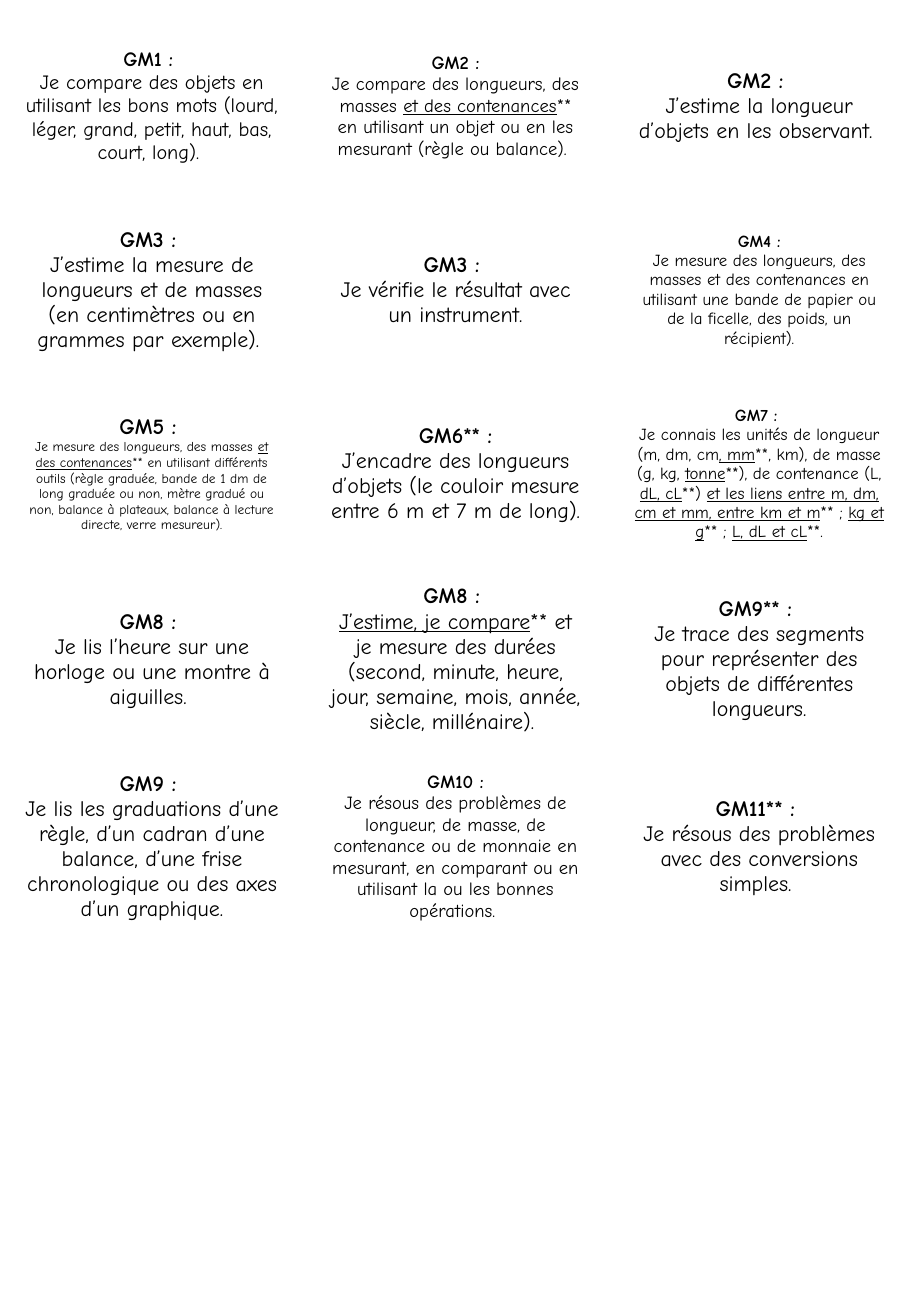
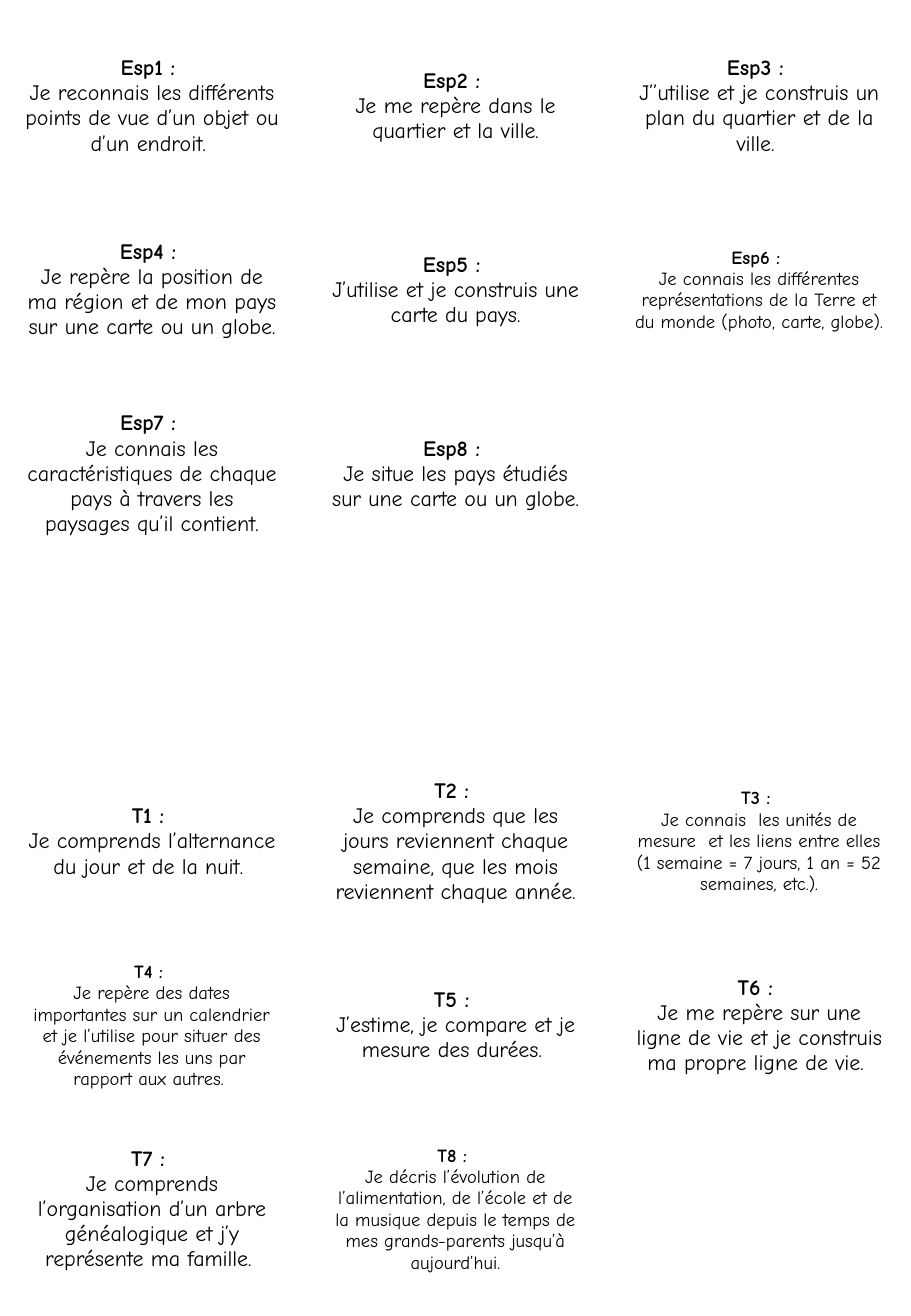
from pptx import Presentation
from pptx.dml.color import RGBColor
from pptx.enum.text import MSO_ANCHOR, PP_ALIGN
from pptx.util import Pt

MIDDLE = MSO_ANCHOR.MIDDLE
CENTER = PP_ALIGN.CENTER

FONT = "Comic Neue"
COLORS = {"text": "000000", "cell": "FFFFFF"}
WIDTH, HEIGHT = 540, 780
COLS = 3
TOP = 8.5
PAD_X, PAD_Y = 15, 10
ROW, TALL = 109, 111

measures = [
    (12, "GM1 : ", "Je compare des objets en utilisant les bons mots (lourd, léger, grand, petit, haut, bas, court, long). "),
    (11, "GM2 :", "Je compare des longueurs, des masses _et des contenances_** en utilisant un objet ou en les mesurant (règle ou balance). "),
    (13, "GM2 : ", "J’estime la longueur d’objets en les observant. "),
    (13, "GM3 : ", "J’estime la mesure de longueurs et de masses (en centimètres ou en grammes par exemple). "),
    (13, "GM3 : ", "Je vérifie le résultat avec un instrument."),
    (10, "GM4 :", "Je mesure des longueurs, des masses et des contenances en utilisant une bande de papier ou de la ficelle, des poids, un récipient)."),
    (8, "GM5 : ", "Je mesure des longueurs, des masses _et des contenances_** en utilisant différents outils (règle graduée, bande de 1 dm de long graduée ou non, mètre gradué ou non, balance à plateaux, balance à lecture directe, verre mesureur)."),
    (13, "GM6** :", "J’encadre des longueurs d’objets (le couloir mesure entre 6 m et 7 m de long)."),
    (10, "GM7 : ", "Je connais les unités de longueur (m, dm, cm_, mm_**, km), de masse (g, kg, _tonne_**), de contenance (L, _dL, cL_**) _et les liens entre m, dm, cm et mm, entre km et m_** ; _kg et g_** ; _L, dL et cL_**."),
    (13, "GM8 : ", "Je lis l’heure sur une horloge ou une montre à aiguilles. "),
    (13, "GM8 : ", "_J’estime, je compare_** et je mesure des durées (second, minute, heure, jour, semaine, mois, année, siècle, millénaire). "),
    (13, "GM9** : ", "Je trace des segments pour représenter des objets de différentes longueurs."),
    (13, "GM9 : ", "Je lis les graduations d’une règle, d’un cadran d’une balance, d’une frise chronologique ou des axes d’un graphique."),
    (11, "GM10 :", "Je résous des problèmes de longueur, de masse, de contenance ou de monnaie en mesurant, en comparant ou en utilisant la ou les bonnes opérations. "),
    (13, "GM11** : ", "Je résous des problèmes avec des conversions simples. "),
]

space = [
    (13, "Esp1 : ", "Je reconnais les différents points de vue d’un objet ou d’un endroit. "),
    (13, "Esp2 : ", "Je me repère dans le quartier et la ville."),
    (13, "Esp3 : ", "J’’utilise et je construis un plan du quartier et de la ville. "),
    (13, "Esp4 : ", "Je repère la position de ma région et de mon pays sur une carte ou un globe."),
    (13, "Esp5 : ", "J’utilise et je construis une carte du pays."),
    (11, "Esp6 : ", "Je connais les différentes représentations de la Terre et du monde (photo, carte, globe). "),
    (13, "Esp7 : ", "Je connais les caractéristiques de chaque pays à travers les paysages qu’il contient."),
    (13, "Esp8 : ", "Je situe les pays étudiés sur une carte ou un globe."),
]

time = [
    (13, "T1 : ", "Je comprends l’alternance du jour et de la nuit. "),
    (13, "T2 : ", "Je comprends que les jours reviennent chaque semaine, que les mois reviennent chaque année."),
    (11, "T3 : ", "Je connais  les unités de mesure  et les liens entre elles (1 semaine = 7 jours, 1 an = 52 semaines, etc.)."),
    (11, "T4 : ", "Je repère des dates importantes sur un calendrier et je l’utilise pour situer des événements les uns par rapport aux autres. "),
    (13, "T5 : ", "J’estime, je compare et je mesure des durées. "),
    (13, "T6 : ", "Je me repère sur une ligne de vie et je construis ma propre ligne de vie. "),
    (13, "T7 : ", "Je comprends l’organisation d’un arbre généalogique et j’y représente ma famille. "),
    (11, "T8 : ", "Je décris l’évolution de l’alimentation, de l’école et de la musique depuis le temps de mes grands-parents jusqu’à aujourd’hui."),
]

HEADS = {"GM5 : ": 13}

pages = [
    ([ROW] * 3 + [TALL] * 2 + [ROW] * 3, {0: measures}),
    ([ROW] * 7, {0: space, 4: time}),
]


def add_run(para, text, size, bold=False, under=False):
    run = para.add_run()
    run.text = text
    font = run.font
    font.name = FONT
    font.size = Pt(size)
    font.bold = bold
    font.underline = under
    font.color.rgb = RGBColor.from_string(COLORS["text"])


deck = Presentation()
deck.slide_width = Pt(WIDTH)
deck.slide_height = Pt(HEIGHT)

for rows, groups in pages:
    slide = deck.slides.add_slide(deck.slide_layouts[6])
    frame = slide.shapes.add_table(len(rows), COLS, Pt(0), Pt(TOP), Pt(WIDTH), Pt(sum(rows)))
    table = frame.table
    table.first_row = False
    table.horz_banding = False
    for row, height in zip(table.rows, rows):
        row.height = Pt(height)
    for cell in table.iter_cells():
        cell.fill.solid()
        cell.fill.fore_color.rgb = RGBColor.from_string(COLORS["cell"])
        cell.vertical_anchor = MIDDLE
        cell.margin_left = cell.margin_right = Pt(PAD_X)
        cell.margin_top = cell.margin_bottom = Pt(PAD_Y)
    for start, goals in groups.items():
        for i, (size, code, goal) in enumerate(goals):
            text = table.cell(start + i // COLS, i % COLS).text_frame
            head, body = text.paragraphs[0], text.add_paragraph()
            head.alignment = body.alignment = CENTER
            add_run(head, code, HEADS.get(code, size), bold=True)
            for n, part in enumerate(goal.split("_")):
                if part:
                    add_run(body, part, size, under=n % 2 == 1)

deck.save("out.pptx")
